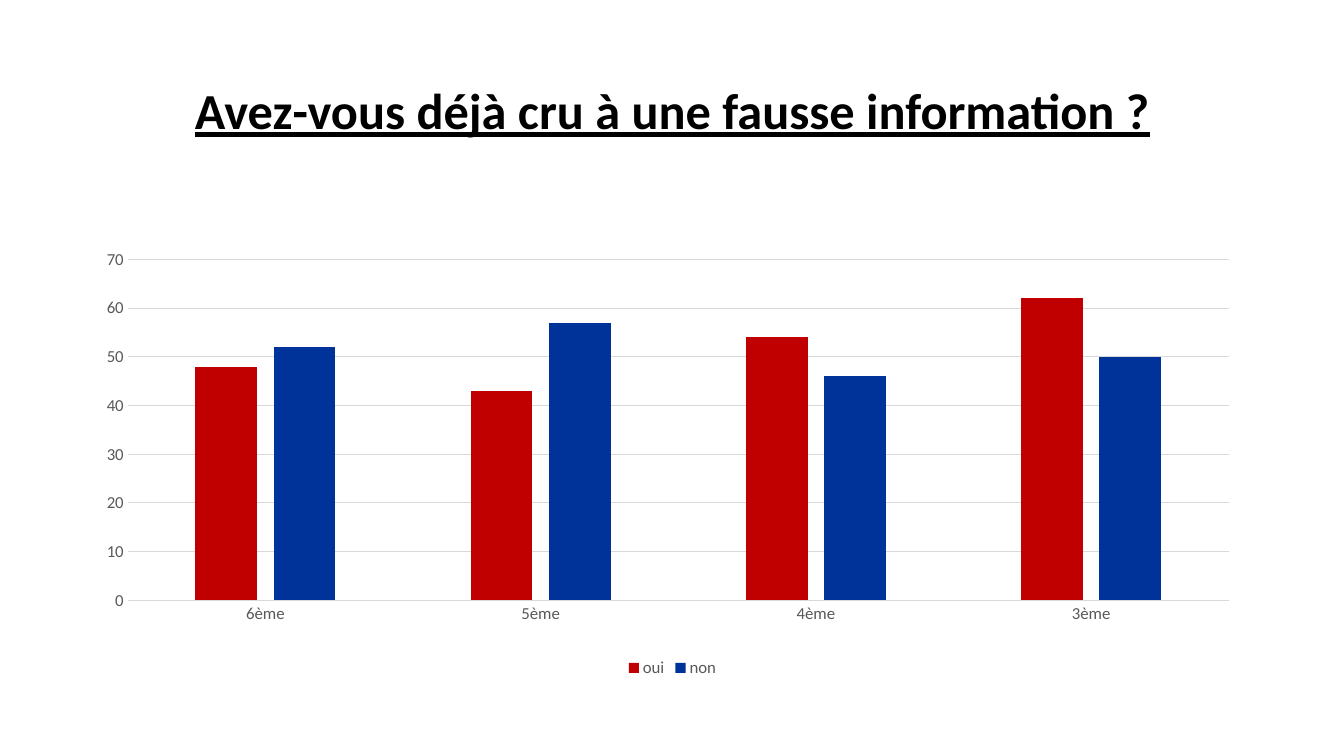
import pptx
import pptx.util
import pptx.dml.color
import pptx.chart.data
import pptx.enum.chart
import pptx.enum.text
import pptx.oxml

title = "Avez-vous déjà cru à une fausse information ?"
grades = ["6ème", "5ème", "4ème", "3ème"]
votes = [
    ("oui", "C00000", [48, 43, 54, 62]),
    ("non", "003399", [52, 57, 46, 50]),
]
face = "Calibri"
gray = "595959"
pale = "D9D9D9"
page = (1344, 756)
head_box = (93, 40, 1159, 146)
chart_box = (93, 202, 1159, 480)
plot_box = {"x": 0.03, "y": 0.12, "w": 0.95, "h": 0.71}


def px(count):
    return round(count * 914400 / 100.8)


def color(code):
    return pptx.dml.color.RGBColor.from_string(code)


def style(font, size, code):
    font.name = face
    font.size = pptx.util.Pt(size)
    font.color.rgb = color(code)


def rule(line):
    line.color.rgb = color(pale)
    line.width = pptx.util.Pt(0.75)


deck = pptx.Presentation()
deck.slide_width, deck.slide_height = map(px, page)
slide = deck.slides.add_slide(deck.slide_layouts[6])

frame = slide.shapes.add_textbox(*map(px, head_box)).text_frame
frame.word_wrap = True
frame.vertical_anchor = pptx.enum.text.MSO_ANCHOR.MIDDLE
head = frame.paragraphs[0]
head.text = title
head.alignment = pptx.enum.text.PP_ALIGN.CENTER
head.line_spacing = 0.9
style(head.font, 36, "000000")
head.font.bold = True
head.font.underline = True

data = pptx.chart.data.CategoryChartData()
data.categories = grades
for name, code, counts in votes:
    data.add_series(name, counts)
kind = pptx.enum.chart.XL_CHART_TYPE.COLUMN_CLUSTERED
chart = slide.shapes.add_chart(kind, *map(px, chart_box), data).chart
style(chart.font, 12, gray)
chart.has_title = False
chart.has_legend = True
chart.legend.position = pptx.enum.chart.XL_LEGEND_POSITION.BOTTOM
chart.legend.include_in_layout = False
style(chart.legend.font, 12, gray)

plot = chart.plots[0]
plot.gap_width = 219
plot.overlap = -27
plot.vary_by_categories = False
for bars, (name, code, counts) in zip(plot.series, votes):
    bars.format.fill.solid()
    bars.format.fill.fore_color.rgb = color(code)

for axis in (chart.category_axis, chart.value_axis):
    axis.major_tick_mark = pptx.enum.chart.XL_TICK_MARK.NONE
    axis.minor_tick_mark = pptx.enum.chart.XL_TICK_MARK.NONE
    style(axis.tick_labels.font, 12, gray)
rule(chart.category_axis.format.line)
scale = chart.value_axis
scale.minimum_scale = 0
scale.maximum_scale = 70
scale.major_unit = 10
scale.format.line.fill.background()
scale.has_major_gridlines = True
rule(scale.major_gridlines.format.line)

space = "http://schemas.openxmlformats.org/drawingml/2006/chart"
parts = '<c:layoutTarget val="inner"/><c:xMode val="edge"/><c:yMode val="edge"/>'
parts += "".join(f'<c:{key} val="{part}"/>' for key, part in plot_box.items())
layout = pptx.oxml.parse_xml(
    f'<c:layout xmlns:c="{space}"><c:manualLayout>{parts}</c:manualLayout></c:layout>'
)
area = chart.element.find(f".//{{{space}}}plotArea")
for old in area.findall(f"{{{space}}}layout"):
    area.remove(old)
area.insert(0, layout)

deck.save("out.pptx")
